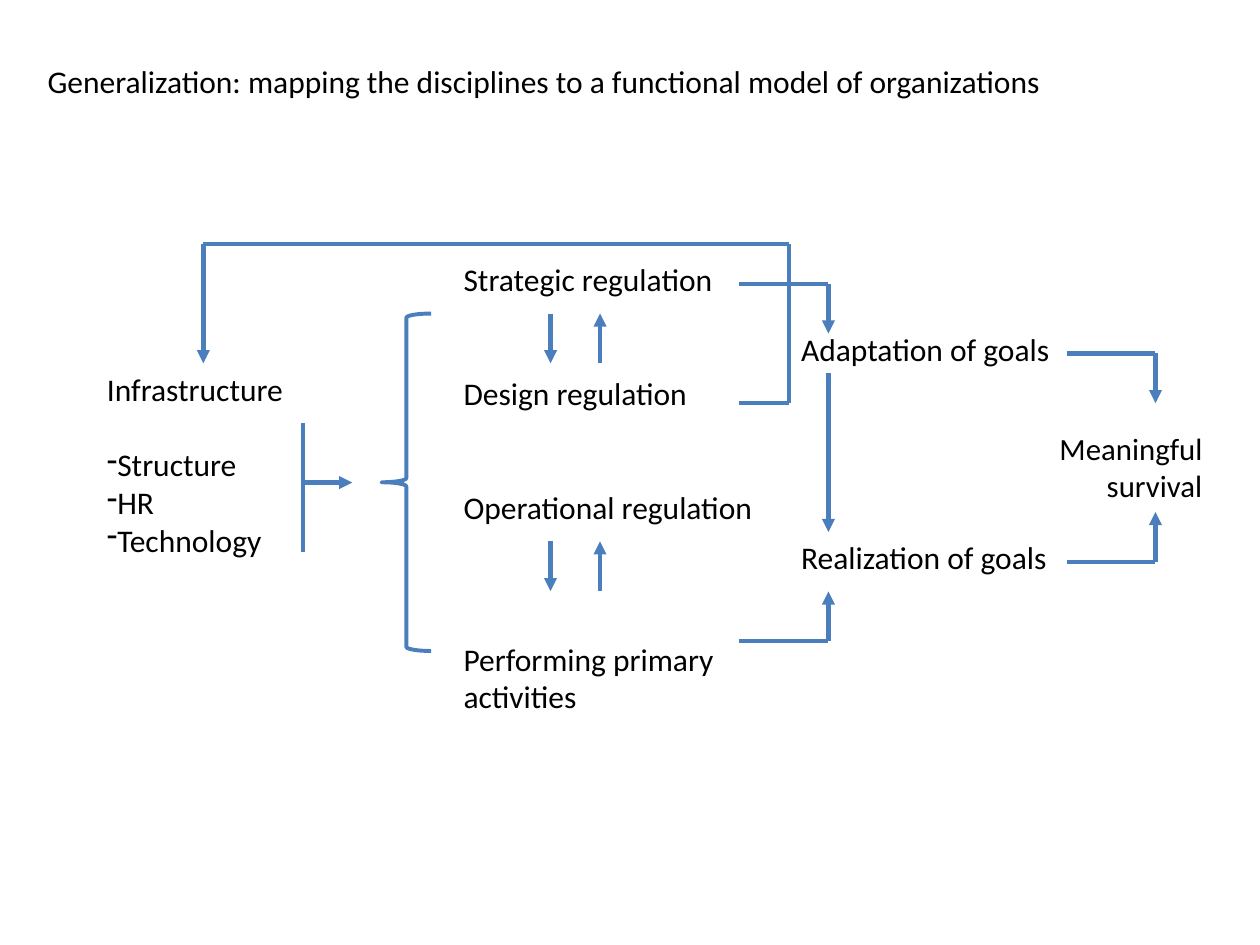
from dataclasses import dataclass
from itertools import pairwise

from lxml import etree
from pptx import Presentation
from pptx.dml.color import RGBColor
from pptx.enum.shapes import MSO_CONNECTOR, MSO_SHAPE
from pptx.enum.text import MSO_ANCHOR, PP_ALIGN
from pptx.oxml.ns import qn
from pptx.util import Pt

STRAIGHT = MSO_CONNECTOR.STRAIGHT
LEFT_BRACE = MSO_SHAPE.LEFT_BRACE
TOP = MSO_ANCHOR.TOP
LEFT = PP_ALIGN.LEFT
TITLE_ONLY = 5


@dataclass(frozen=True)
class Theme:
    font: str = "Calibri"
    text: RGBColor = RGBColor(0x00, 0x00, 0x00)
    line: RGBColor = RGBColor(0x4B, 0x7E, 0xBC)
    size: float = 18
    outcome_size: float = 17.6
    line_width: float = 2.5
    brace_width: float = 2.25


THEME = Theme()


def format_paragraph(p, size=THEME.size):
    p.alignment = LEFT
    p.font.name = THEME.font
    p.font.size = Pt(size)
    p.font.color.rgb = THEME.text


def add_title(s, text, box):
    sp = s.shapes.title
    sp.left, sp.top, sp.width, sp.height = map(Pt, box)
    tf = sp.text_frame
    tf.text = text
    tf.word_wrap = True
    tf.vertical_anchor = TOP
    format_paragraph(tf.paragraphs[0])


def add_label(s, box, lines, size=THEME.size):
    """Add a text box; each line is its text and the space before it."""
    tf = s.shapes.add_textbox(*map(Pt, box)).text_frame
    tf.word_wrap = True
    for i, (text, before) in enumerate(lines):
        p = tf.add_paragraph() if i else tf.paragraphs[0]
        p.text = text
        if before:
            p.space_before = Pt(before)
        format_paragraph(p, size)
    return tf


def set_bullet(p, char):
    pPr = p._p.get_or_add_pPr()
    bullet = etree.Element(qn("a:buChar"), char=char)
    pPr.find(qn("a:defRPr")).addprevious(bullet)


def set_hanging_indent(p, indent):
    pPr = p._p.get_or_add_pPr()
    pPr.set("marL", str(Pt(indent)))
    pPr.set("indent", str(-Pt(indent)))


def add_route(s, *points, arrow=True):
    """Join the points with straight lines, the last one with an arrowhead."""
    for start, end in pairwise(points):
        line = s.shapes.add_connector(STRAIGHT, *map(Pt, start + end))
        line.line.color.rgb = THEME.line
        line.line.width = Pt(THEME.line_width)
        etree.SubElement(line._element.spPr, qn("a:effectLst"))
    if arrow:
        etree.SubElement(line.line._get_or_add_ln(), qn("a:tailEnd"), type="triangle")


def add_brace(s, box):
    sp = s.shapes.add_shape(LEFT_BRACE, *map(Pt, box))
    sp.shadow.inherit = False
    sp.fill.background()
    sp.line.color.rgb = THEME.line
    sp.line.width = Pt(THEME.brace_width)


def main():
    prs = Presentation()
    prs.slide_width, prs.slide_height = Pt(720), Pt(540)
    s = prs.slides.add_slide(prs.slide_layouts[TITLE_ONLY])
    add_title(
        s,
        "Generalization: mapping the disciplines to a functional model of organizations",
        (20, 31.7, 599, 29),
    )

    # Outcome and goals
    tf = add_label(s, (598.3, 242, 121.7, 45.4), [("Meaningful survival", 0)],
                   THEME.outcome_size)
    set_hanging_indent(tf.paragraphs[0], 27)
    add_label(s, (450.7, 185, 170, 29), [("Adaptation of goals", 0)])
    add_label(s, (450.7, 304, 170, 29), [("Realization of goals", 0)])

    # Regulation levels and primary activities
    add_label(s, (257.8, 145.2, 181.4, 269.3), [
        ("Strategic regulation", 0),
        ("Design regulation", 43.5),
        ("Operational regulation", 43.5),
        ("Performing primary activities", 65),
    ])

    # Infrastructure
    tf = add_label(s, (54, 207.6, 170, 116.6), [
        ("Infrastructure", 0),
        ("Structure", 21.5),
        ("HR", 0),
        ("Technology", 0),
    ])
    for p in tf.paragraphs[1:]:
        set_bullet(p, "-")

    # Exchange between neighbouring levels
    for top in (179.2, 309.4):
        bottom = top + 28.4
        add_route(s, (314.6, top), (314.6, bottom))
        add_route(s, (342.9, bottom), (342.9, top))

    # Goals to survival
    add_route(s, (609.5, 202), (660.3, 202), (660.3, 230.4))
    add_route(s, (609.5, 321), (660.3, 321), (660.3, 292.6))

    # Activities and strategy to goals
    add_route(s, (422.4, 366.4), (473.4, 366.4), (473.4, 338))
    add_route(s, (422.4, 162.2), (473.4, 162.2), (473.4, 190.6))
    add_route(s, (473.4, 213.3), (473.4, 304))

    # Design regulation back to infrastructure
    add_route(s, (422.4, 230.4), (450.8, 230.4), (450.8, 139.5),
              (116.2, 139.5), (116.2, 207.6))

    # Infrastructure to all levels
    add_brace(s, (218, 179.2, 28.4, 192.8))
    add_route(s, (173, 242), (173, 315.2), arrow=False)
    add_route(s, (173, 275.8), (201.3, 275.8))

    prs.save("out.pptx")


if __name__ == "__main__":
    main()
